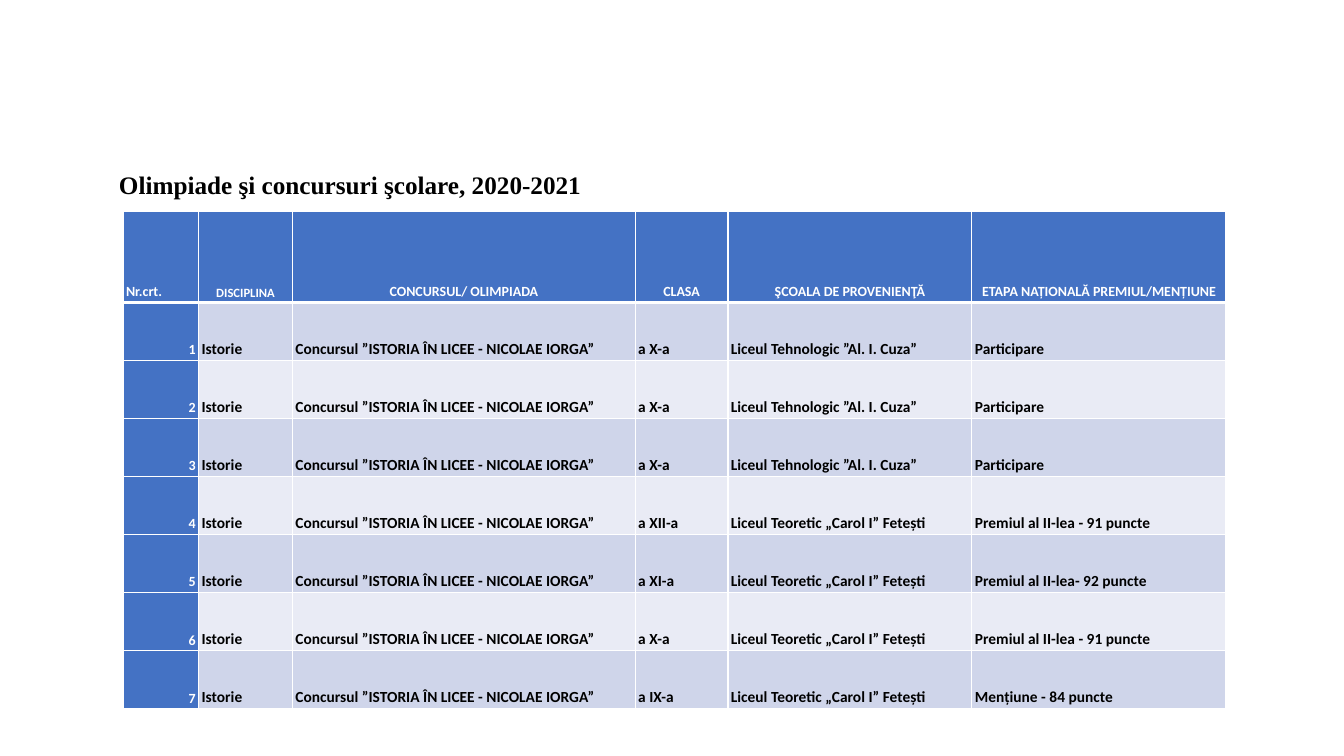
from lxml import etree
from pptx import Presentation
from pptx.dml.color import RGBColor
from pptx.enum.text import MSO_ANCHOR, MSO_AUTO_SIZE, PP_ALIGN
from pptx.oxml.ns import qn
from pptx.util import Inches, Pt

# Content
TITLE = "Olimpiade şi concursuri şcolare, 2020-2021"
HEADERS = ["Nr.crt.", "DISCIPLINA", "CONCURSUL/ OLIMPIADA", "CLASA",
           "ŞCOALA DE PROVENIENŢĂ", "ETAPA NAȚIONALĂ PREMIUL/MENȚIUNE"]
SUBJECT = "Istorie"
CONTEST = "Concursul ”ISTORIA ÎN LICEE - NICOLAE IORGA”"
CUZA = "Liceul Tehnologic ”Al. I. Cuza”"
CAROL = "Liceul Teoretic „Carol I” Fetești"
RESULTS = [  # class, school, result
    ("a X-a", CUZA, "Participare"),
    ("a X-a", CUZA, "Participare"),
    ("a X-a", CUZA, "Participare"),
    ("a XII-a", CAROL, "Premiul al II-lea - 91 puncte"),
    ("a XI-a", CAROL, "Premiul al II-lea- 92 puncte"),
    ("a X-a", CAROL, "Premiul al II-lea - 91 puncte"),
    ("a IX-a", CAROL, "Mențiune - 84 puncte"),
]

# Look
BLACK = RGBColor(0x00, 0x00, 0x00)
WHITE = RGBColor(0xFF, 0xFF, 0xFF)
BLUE = RGBColor(0x44, 0x72, 0xC4)
BANDS = [RGBColor(0xCF, 0xD5, 0xEA), RGBColor(0xE9, 0xEB, 0xF5)]
COL_WIDTHS = [0.75, 0.93, 3.4, 0.92, 2.42, 2.52]
HEADER_HEIGHT, ROW_HEIGHT = 0.9, 0.576


def set_font(p, name, size, color):
    p.font.name, p.font.size, p.font.bold = name, Pt(size), True
    p.font.color.rgb = color


def set_borders(cell, top, bottom):
    tc_pr = cell._tc.get_or_add_tcPr()
    for side, width in (("L", 1), ("R", 1), ("T", top), ("B", bottom)):
        ln = etree.SubElement(tc_pr, qn(f"a:ln{side}"), w=str(Pt(width)))
        fill = etree.SubElement(ln, qn("a:solidFill"))
        etree.SubElement(fill, qn("a:srgbClr"), val=str(WHITE))


def fill_cell(cell, text, row, col):
    heading = row == 0 or col == 0
    set_borders(cell, 3 if row == 1 else 1, 3 if row == 0 else 1)
    cell.fill.solid()
    cell.fill.fore_color.rgb = BLUE if heading else BANDS[(row - 1) % 2]
    cell.vertical_anchor = MSO_ANCHOR.BOTTOM
    cell.margin_left = cell.margin_right = Inches(0.03)
    cell.margin_top = cell.margin_bottom = Inches(0.02)
    cell.text = text
    p = cell.text_frame.paragraphs[0]
    p.line_spacing = 1.07
    if row == 0:
        p.alignment = PP_ALIGN.CENTER if col else PP_ALIGN.LEFT
    else:
        p.alignment = PP_ALIGN.LEFT if col else PP_ALIGN.RIGHT
    size = 9 if (row, col) == (0, 1) else 10 if heading else 11
    set_font(p, "Calibri", size, WHITE if heading else BLACK)


prs = Presentation()
prs.slide_width, prs.slide_height = Inches(13.33), Inches(7.5)
s = prs.slides.add_slide(prs.slide_layouts[5])

# Title
title = s.shapes.title
title.left, title.top = Inches(1.08), Inches(1.46)
title.width, title.height = Inches(11.5), Inches(1.45)
tf = title.text_frame
tf.text = TITLE
tf.word_wrap = True
tf.auto_size = MSO_AUTO_SIZE.NONE
tf.vertical_anchor = MSO_ANCHOR.TOP
tf.margin_top = Inches(0.25)
p = tf.paragraphs[0]
p.alignment = PP_ALIGN.LEFT
p.line_spacing = 0.9
set_font(p, "Times New Roman", 18, BLACK)

# Results table
rows = [HEADERS] + [(str(n), SUBJECT, CONTEST, *result)
                    for n, result in enumerate(RESULTS, 1)]
height = HEADER_HEIGHT + ROW_HEIGHT * len(RESULTS)
table = s.shapes.add_table(len(rows), len(HEADERS), Inches(1.22), Inches(2.1),
                           Inches(sum(COL_WIDTHS)), Inches(height)).table
table.first_col = True
for column, width in zip(table.columns, COL_WIDTHS):
    column.width = Inches(width)
for i, row in enumerate(rows):
    table.rows[i].height = Inches(ROW_HEIGHT if i else HEADER_HEIGHT)
    for j, text in enumerate(row):
        fill_cell(table.cell(i, j), text, i, j)

prs.save("out.pptx")
